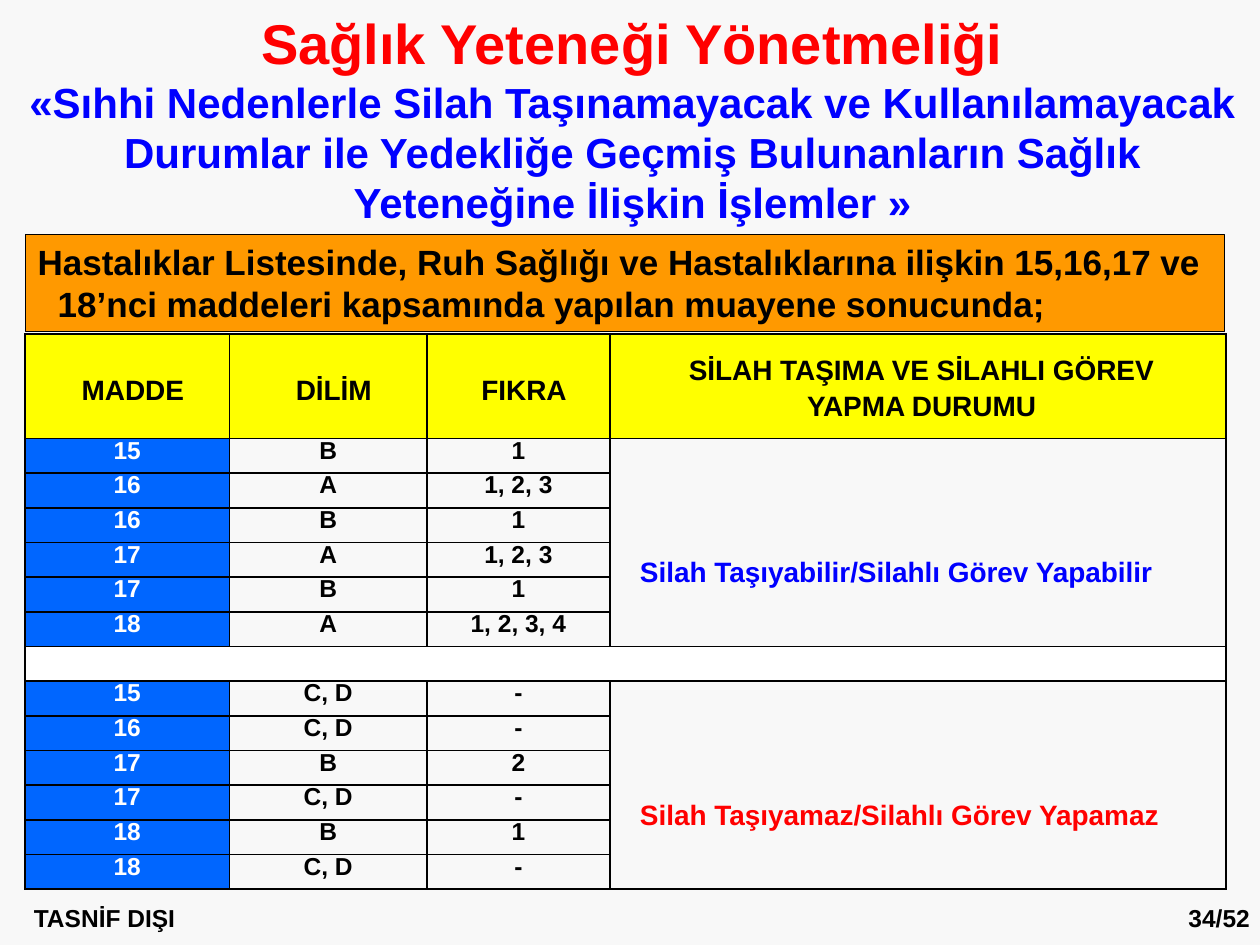
import pptx
import pptx.dml.color
import pptx.enum.shapes
import pptx.enum.text
import pptx.oxml
import pptx.oxml.ns
import pptx.util

THEME = {
    "font": "Arial",
    "page": "F8F8F8", "black": "000000", "white": "FFFFFF",
    "red": "FF0000", "blue": "0000FF",
    "banner": "FF9900", "header": "FFFF00", "article": "0066FF",
    "title": 32, "subtitle": 24, "lead": 20, "label": 16, "small": 14,
}
ALIGN = pptx.enum.text.PP_ALIGN
MIDDLE = pptx.enum.text.MSO_ANCHOR.MIDDLE

deck = pptx.Presentation()
deck.slide_width = pptx.util.Inches(10)
deck.slide_height = pptx.util.Inches(7.5)
slide = deck.slides.add_slide(deck.slide_layouts[6])
slide.background.fill.solid()
slide.background.fill.fore_color.rgb = pptx.dml.color.RGBColor.from_string(THEME["page"])

# The slide is a grid of 100 columns by 75 rows of square units
UNIT = deck.slide_width // 100


def write(paragraph, text, size, color="black", align=ALIGN.CENTER):
    paragraph.text = text
    paragraph.alignment = align
    paragraph.font.name = THEME["font"]
    paragraph.font.size = pptx.util.Pt(THEME[size])
    paragraph.font.bold = True
    paragraph.font.color.rgb = pptx.dml.color.RGBColor.from_string(THEME[color])


def set_margins(owner, left, top, right, bottom):
    owner.margin_left, owner.margin_top = int(left * UNIT), int(top * UNIT)
    owner.margin_right, owner.margin_bottom = int(right * UNIT), int(bottom * UNIT)


# Footer: classification and page count
for text, place, align in (
    ("TASNİF DIŞI", (1.7, 71.2, 21, 3.3), ALIGN.LEFT),
    ("34/52", (90.4, 70.9, 9.6, 3.9), ALIGN.RIGHT),
):
    footer = slide.shapes.add_textbox(*(int(n * UNIT) for n in place)).text_frame
    footer.word_wrap = True
    footer.vertical_anchor = MIDDLE
    set_margins(footer, 1, 0.4, 0.8, 0.4)
    write(footer.paragraphs[0], text, "small", align=align)

# Title and subtitle
heading = slide.shapes.add_textbox(
    *(int(n * UNIT) for n in (0.2, 0.3, 100, 18.3))).text_frame
heading.word_wrap = True
set_margins(heading, 0.8, 0.4, 0.8, 0.4)
write(heading.paragraphs[0], "Sağlık Yeteneği Yönetmeliği", "title", "red")
write(heading.add_paragraph(),
      "«Sıhhi Nedenlerle Silah Taşınamayacak ve Kullanılamayacak Durumlar ile "
      "Yedekliğe Geçmiş Bulunanların Sağlık Yeteneğine İlişkin İşlemler »",
      "subtitle", "blue")

# Table: header, permitted group, white gap, forbidden group
permitted = [("15", "B", "1"), ("16", "A", "1, 2, 3"), ("16", "B", "1"),
             ("17", "A", "1, 2, 3"), ("17", "B", "1"), ("18", "A", "1, 2, 3, 4")]
forbidden = [("15", "C, D", "-"), ("16", "C, D", "-"), ("17", "B", "2"),
             ("17", "C, D", "-"), ("18", "B", "1"), ("18", "C, D", "-")]
headers = ("MADDE", "DİLİM", "FIKRA", "SİLAH TAŞIMA VE SİLAHLI GÖREV YAPMA DURUMU")
rows = [headers] + permitted + [()] + forbidden
gap_row = 1 + len(permitted)
column_widths = (16.2, 15.7, 14.5, 48.9)
header_height, table_height = 8.3, 44.1
row_height = (table_height - header_height) / (len(rows) - 1)

grid = slide.shapes.add_table(
    len(rows), len(headers), int(2 * UNIT), int(26.5 * UNIT),
    int(sum(column_widths) * UNIT), int(table_height * UNIT)).table
grid.first_row = grid.horz_banding = False
for column, width in zip(grid.columns, column_widths):
    column.width = int(width * UNIT)
for r, row in enumerate(grid.rows):
    row.height = int((row_height if r else header_height) * UNIT)

for r, texts in enumerate(rows):
    for c in range(len(headers)):
        cell = grid.cell(r, c)
        cell.vertical_anchor = MIDDLE
        set_margins(cell, 0, 0, 0, 0)
        properties = cell._tc.get_or_add_tcPr()
        for side in ("lnL", "lnR", "lnT", "lnB"):
            properties.append(pptx.oxml.parse_xml(
                f'<a:{side} {pptx.oxml.ns.nsdecls("a")} w="12700"><a:solidFill>'
                f'<a:srgbClr val="{THEME["black"]}"/></a:solidFill></a:{side}>'))
        if r == 0:
            fill = "header"
        elif r == gap_row:
            fill = "white"
        else:
            fill = "article" if c == 0 else None
        if fill:
            cell.fill.solid()
            cell.fill.fore_color.rgb = pptx.dml.color.RGBColor.from_string(THEME[fill])
        else:
            cell.fill.background()

        paragraph = cell.text_frame.paragraphs[0]
        if r == 0:
            write(paragraph, texts[c], "label")
            if c < 3:
                set_margins(cell, 0.9, 0.8, 0, 0)
            else:
                set_margins(cell, 4.6, 0, 4, 0)
                paragraph.line_spacing = 1.15
                paragraph.space_before = pptx.util.Pt(7.2)
        else:
            write(paragraph, texts[c] if c < len(texts) else "", "small",
                  "white" if c == 0 else "black")
            paragraph.line_spacing = pptx.util.Pt(9.8)
            paragraph.space_before = pptx.util.Pt(1.1)

# Merged cells: the gap and the verdict for each group
grid.cell(gap_row, 0).merge(grid.cell(gap_row, 3))
for first, group, verdict, color in (
    (1, permitted, "Silah Taşıyabilir/Silahlı Görev Yapabilir", "blue"),
    (gap_row + 1, forbidden, "Silah Taşıyamaz/Silahlı Görev Yapamaz", "red"),
):
    cell = grid.cell(first, 3)
    cell.merge(grid.cell(first + len(group) - 1, 3))
    set_margins(cell, 2.4, 4.8, 0, 0)
    paragraph = cell.text_frame.paragraphs[0]
    write(paragraph, verdict, "label", color, ALIGN.LEFT)
    paragraph.line_spacing = 1.0

# Orange lead-in banner with a hanging indent
banner = slide.shapes.add_shape(
    pptx.enum.shapes.MSO_SHAPE.RECTANGLE,
    *(int(n * UNIT) for n in (2, 18.6, 95.2, 7.7)))
banner.shadow.inherit = False
banner.fill.solid()
banner.fill.fore_color.rgb = pptx.dml.color.RGBColor.from_string(THEME["banner"])
banner.line.color.rgb = pptx.dml.color.RGBColor.from_string(THEME["black"])
banner.line.width = pptx.util.Pt(0.75)
lead = banner.text_frame
lead.word_wrap = True
lead.vertical_anchor = pptx.enum.text.MSO_ANCHOR.TOP
set_margins(lead, 1, 0.5, 1, 0.5)
write(lead.paragraphs[0],
      "Hastalıklar Listesinde, Ruh Sağlığı ve Hastalıklarına ilişkin 15,16,17 ve "
      "18’nci maddeleri kapsamında yapılan muayene sonucunda;",
      "lead", align=ALIGN.LEFT)
hanging = lead.paragraphs[0]._p.get_or_add_pPr()
hanging.set("marL", str(int(1.6 * UNIT)))
hanging.set("indent", str(int(-1.6 * UNIT)))

deck.save("out.pptx")
